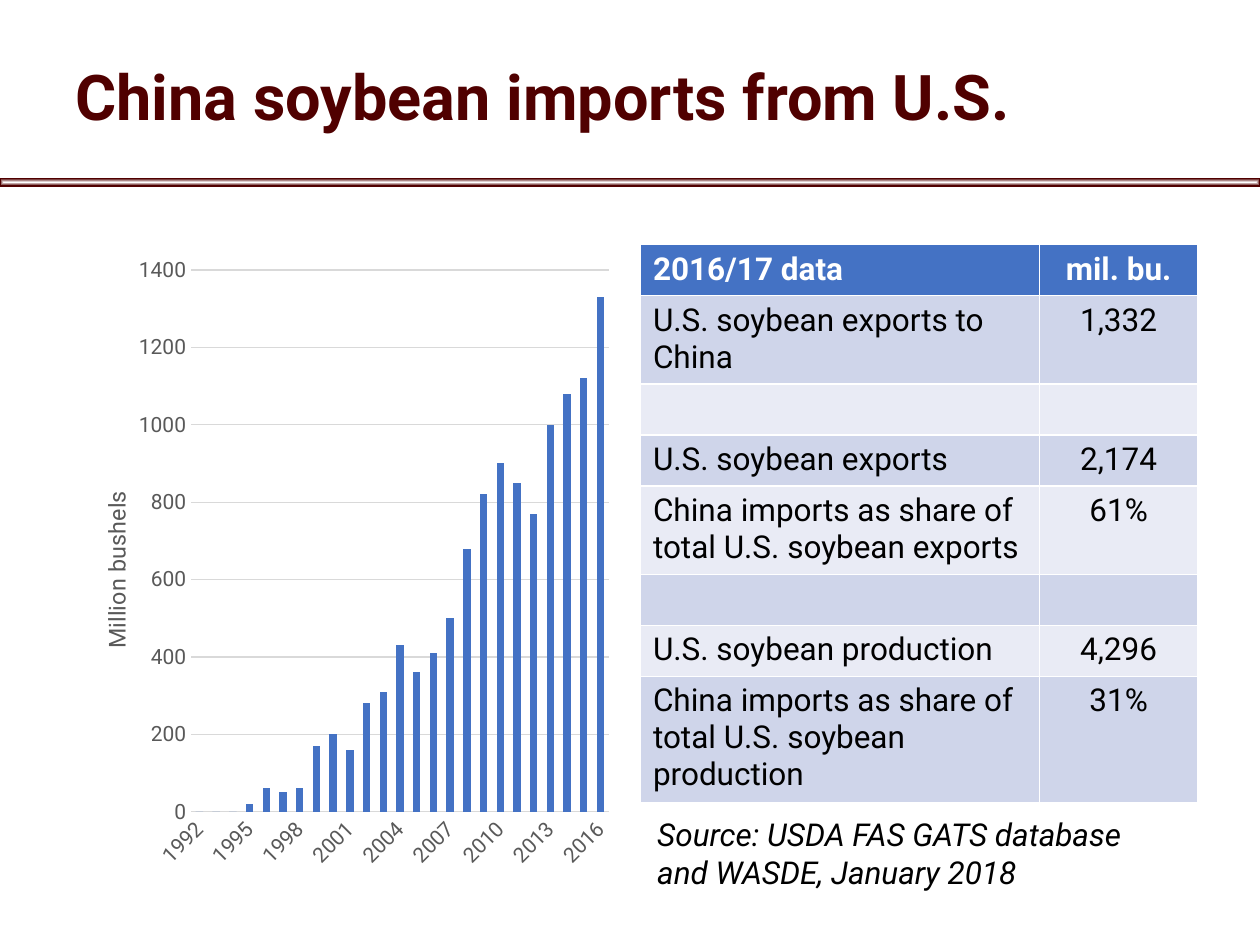
from lxml import etree
from pptx import Presentation
from pptx.chart.data import CategoryChartData
from pptx.dml.color import RGBColor
from pptx.enum.chart import XL_CHART_TYPE, XL_TICK_MARK
from pptx.enum.shapes import MSO_SHAPE
from pptx.enum.text import MSO_ANCHOR, PP_ALIGN
from pptx.oxml import parse_xml
from pptx.oxml.ns import nsdecls, qn
from pptx.util import Cm, Pt

COLUMN = XL_CHART_TYPE.COLUMN_CLUSTERED
NO_TICK = XL_TICK_MARK.NONE
RECT = MSO_SHAPE.RECTANGLE
MIDDLE = MSO_ANCHOR.MIDDLE
LEFT, CENTER = PP_ALIGN.LEFT, PP_ALIGN.CENTER

FONT = "Roboto"
MAROON = RGBColor(0x50, 0x00, 0x00)
BLUE = RGBColor(0x44, 0x72, 0xC4)
BANDS = RGBColor(0xCF, 0xD5, 0xEA), RGBColor(0xE9, 0xEB, 0xF5)
GRAY = RGBColor(0x59, 0x59, 0x59)
SILVER = RGBColor(0xD9, 0xD9, 0xD9)
BLACK = RGBColor(0, 0, 0)
WHITE = RGBColor(0xFF, 0xFF, 0xFF)

# Content
TITLE = "China soybean imports from U.S."
SOURCE = "Source: USDA FAS GATS database and WASDE, January 2018"
UNIT = "Million bushels"
START = 1992
IMPORTS = [0, 0, 0, 20, 60, 50, 60, 170, 200, 160, 280, 310, 430, 360, 410,
           500, 680, 820, 900, 850, 770, 1000, 1080, 1120, 1330]
ROWS = [
    ("2016/17 data", "mil. bu."),
    ("U.S. soybean exports to China", "1,332"),
    ("", ""),
    ("U.S. soybean exports", "2,174"),
    ("China imports as share of total U.S. soybean exports", "61%"),
    ("", ""),
    ("U.S. soybean production", "4,296"),
    ("China imports as share of total U.S. soybean production", "31%"),
]
WIDTHS = Cm(8.05), Cm(3.18)
# Row heights follow the number of text lines
HEIGHTS = {1: Cm(1.03), 2: Cm(1.75), 3: Cm(2.5)}
LINES = [1, 2, 1, 1, 2, 1, 1, 3]


def style(font, size, color, bold=False, italic=False):
    font.name, font.size = FONT, Pt(size)
    font.color.rgb = color
    font.bold, font.italic = bold, italic


def add_text(slide, box, text, size, color, **look):
    frame = slide.shapes.add_textbox(*box).text_frame
    frame.word_wrap = True
    par = frame.paragraphs[0]
    par.text = text
    style(par.font, size, color, **look)
    return frame


def place(part, after, inner=False, **spots):
    """Give a chart part a fixed place, in shares of the chart."""
    for old in part.findall(qn("c:layout")):
        part.remove(old)
    layout = etree.Element(qn("c:layout"))
    manual = etree.SubElement(layout, qn("c:manualLayout"))
    if inner:
        etree.SubElement(manual, qn("c:layoutTarget")).set("val", "inner")
    for key in "xy":
        etree.SubElement(manual, qn(f"c:{key}Mode")).set("val", "edge")
    for key, share in spots.items():
        etree.SubElement(manual, qn(f"c:{key}")).set("val", str(share))
    if after is None:
        part.insert(0, layout)
    else:
        after.addnext(layout)


def add_rule(slide):
    bar = slide.shapes.add_shape(RECT, 0, Cm(3.6), Cm(25.4), Cm(0.15))
    bar.shadow.inherit = False
    bar.line.color.rgb = MAROON
    bar.line.width = Pt(0.75)
    bar.fill.background()
    blank = bar.fill._xPr.find(qn("a:noFill"))
    blank.getparent().replace(blank, parse_xml(
        f'<a:gradFill {nsdecls("a")} rotWithShape="1"><a:gsLst>'
        f'<a:gs pos="0"><a:srgbClr val="{WHITE}"/></a:gs>'
        f'<a:gs pos="100000"><a:srgbClr val="{MAROON}"/></a:gs></a:gsLst>'
        '<a:path path="shape"><a:fillToRect l="50000" t="50000" '
        'r="50000" b="50000"/></a:path></a:gradFill>'))


def add_bars(slide):
    data = CategoryChartData()
    data.categories = [str(START + i) for i in range(len(IMPORTS))]
    data.add_series("Series 1", IMPORTS)
    chart = slide.shapes.add_chart(
        COLUMN, Cm(1.27), Cm(4.93), Cm(11.23), Cm(12.85), data).chart
    chart.has_legend = chart.has_title = False
    style(chart.font, 10, BLACK)

    plot = chart.plots[0]
    plot.gap_width, plot.overlap = 125, -27
    plot.vary_by_categories = False
    fill = plot.series[0].format.fill
    fill.solid()
    fill.fore_color.rgb = BLUE

    years, scale = chart.category_axis, chart.value_axis
    for axis in (years, scale):
        axis.major_tick_mark = axis.minor_tick_mark = NO_TICK
        style(axis.tick_labels.font, 12, GRAY)
    scale.minimum_scale, scale.maximum_scale = 0, 1400
    scale.major_unit = 200
    scale.format.line.fill.background()
    for line in (years.format.line, scale.major_gridlines.format.line):
        line.color.rgb = SILVER
        line.width = Pt(0.75)

    # Every third year, slanted
    years._element.find(qn("c:txPr")).find(qn("a:bodyPr")).set("rot", "-2700000")
    skip = etree.Element(qn("c:tickLblSkip"))
    skip.set("val", "3")
    years._element.find(qn("c:noMultiLvlLbl")).addprevious(skip)

    frame = scale.axis_title.text_frame
    frame.text = UNIT
    style(frame.paragraphs[0].font, 13.3, GRAY)
    frame._txBody.find(qn("a:bodyPr")).set("rot", "-5400000")
    title = scale.axis_title._element
    place(title, title.find(qn("c:tx")), x=0.06, y=0.38)
    area = chart._chartSpace.chart.plotArea
    place(area, None, inner=True, x=0.23, y=0.04, w=0.75, h=0.85)


def add_grid(slide):
    table = slide.shapes.add_table(
        len(ROWS), len(WIDTHS), Cm(12.91), Cm(4.93),
        sum(WIDTHS), sum(HEIGHTS[n] for n in LINES)).table
    for col, width in zip(table.columns, WIDTHS):
        col.width = width
    for r, (row, count) in enumerate(zip(ROWS, LINES)):
        table.rows[r].height = HEIGHTS[count]
        head = r == 0
        for c, text in enumerate(row):
            cell = table.cell(r, c)
            cell.fill.solid()
            cell.fill.fore_color.rgb = BLUE if head else BANDS[(r - 1) % 2]
            par = cell.text_frame.paragraphs[0]
            par.text = text
            par.alignment = CENTER if c else LEFT
            style(par.font, 18, WHITE if head else BLACK, bold=head)


def main():
    deck = Presentation()
    deck.slide_width, deck.slide_height = Cm(25.4), Cm(19.05)
    slide = deck.slides.add_slide(deck.slide_layouts[6])

    # Title and rule
    box = Cm(1.27), Cm(0.43), Cm(22.86), Cm(3.18)
    title = add_text(slide, box, TITLE, 36, MAROON, bold=True)
    title.vertical_anchor = MIDDLE
    title.paragraphs[0].line_spacing = 0.9
    add_rule(slide)

    # Chart, table and source
    add_bars(slide)
    add_grid(slide)
    box = Cm(13), Cm(16.31), Cm(10.29), Cm(1.8)
    add_text(slide, box, SOURCE, 18, BLACK, italic=True)

    deck.save("out.pptx")


if __name__ == "__main__":
    main()
